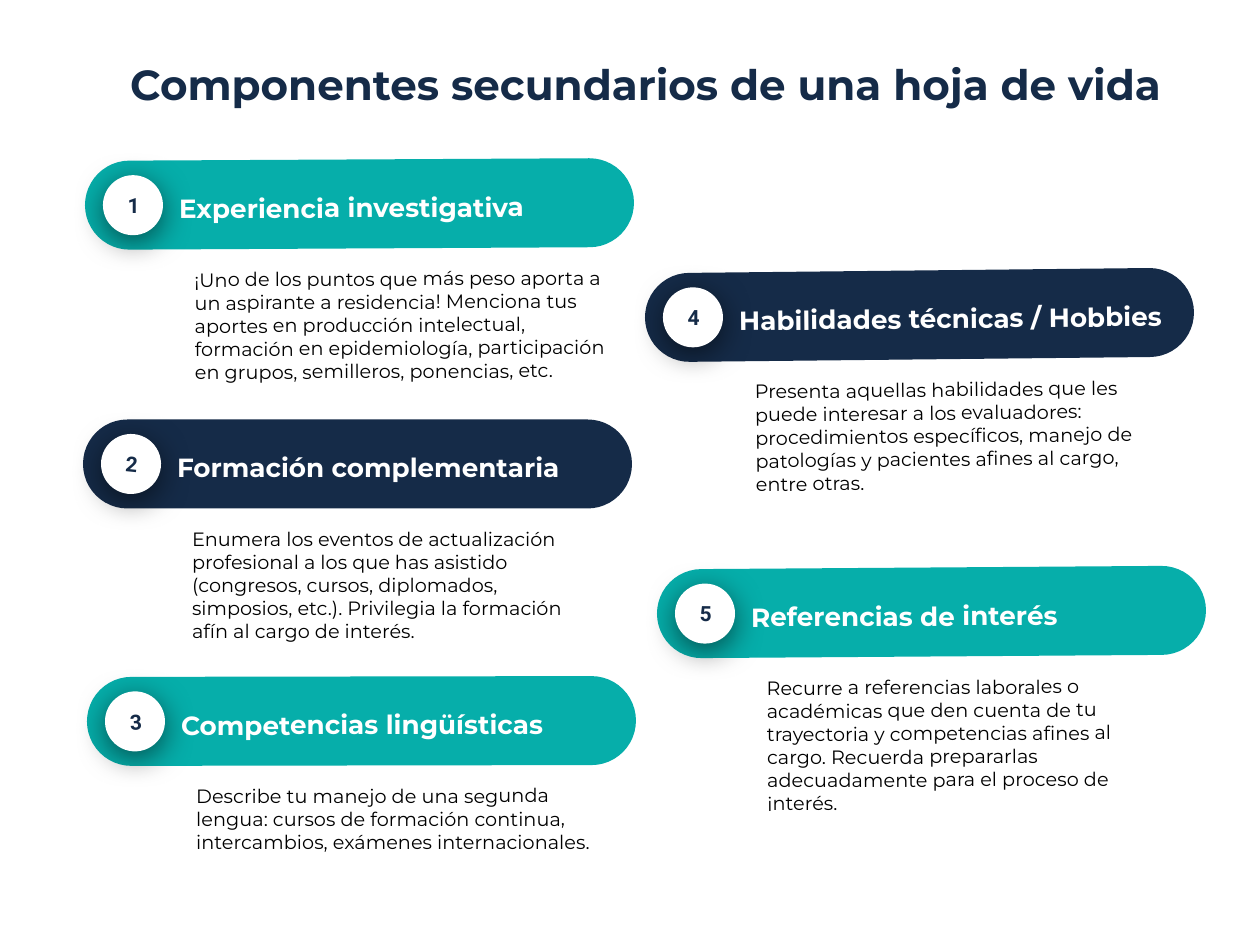
from dataclasses import dataclass
from math import cos, radians, sin

from lxml.etree import SubElement
from pptx import Presentation
from pptx.dml.color import RGBColor
from pptx.enum.shapes import MSO_SHAPE as Preset
from pptx.enum.text import MSO_ANCHOR as Anchor, MSO_AUTO_SIZE as AutoSize, PP_ALIGN as Align
from pptx.oxml.ns import qn
from pptx.shapes.autoshape import Shape
from pptx.shapes.shapetree import GroupShapes
from pptx.slide import Slide
from pptx.util import Emu, Pt

EMU_PER_PX = 914400 / 126
COLORS = {"navy": "152B48", "teal": "06AEAA", "white": "FFFFFF", "black": "000000"}
BAR_WIDTH, BAR_HEIGHT = 549, 89
BADGE_SIZE = 60
BADGE_LEFT, HEADING_LEFT, BODY_LEFT = -257, -197, -182
HEADING_HEIGHT, BODY_HEIGHT = 63, 82
HEADING_DROP, BODY_DROP = 1, 88
INSET = 16


@dataclass(frozen=True)
class Card:
    number: int
    center_x: int
    center_y: int
    tilt: float
    badge_tilt: float
    color: str
    heading: str
    body: str
    body_width: int
    heading_width: int = 436


CARDS = [
    Card(1, 360, 204, -0.3, 0, "teal", "Experiencia investigativa",
         "¡Uno de los puntos que más peso aporta a un aspirante a residencia! Menciona tus "
         "aportes en producción intelectual, formación en epidemiología, participación en "
         "grupos, semilleros, ponencias, etc.", 446),
    Card(2, 358, 464, 0, 6.1, "navy", "Formación complementaria",
         "Enumera los eventos de actualización profesional a los que has asistido (congresos, "
         "cursos, diplomados, simposios, etc.). Privilegia la formación afín al cargo de "
         "interés.", 432),
    Card(3, 362, 721, -0.1, -3.2, "teal", "Competencias lingüísticas",
         "Describe tu manejo de una segunda lengua: cursos de formación continua, "
         "intercambios, exámenes internacionales.", 447),
    Card(4, 920, 315, -0.6, 0, "navy", "Habilidades técnicas / Hobbies",
         "Presenta aquellas habilidades que les puede interesar a los evaluadores: "
         "procedimientos específicos, manejo de patologías y pacientes afines al cargo, "
         "entre otras.", 444, 471),
    Card(5, 932, 612, -0.4, 0.6, "teal", "Referencias de interés",
         "Recurre a referencias laborales o académicas que den cuenta de tu trayectoria y "
         "competencias afines al cargo. Recuerda prepararlas adecuadamente para el proceso "
         "de interés.", 438),
]


def px(length: float) -> Emu:
    return Emu(round(length * EMU_PER_PX))


def rgb(color: str) -> RGBColor:
    return RGBColor.from_string(COLORS[color])


def box_on_card(card: Card, left: int, drop: int, width: int, height: int) -> list[Emu]:
    angle = radians(card.tilt)
    across = left + width / 2
    x = card.center_x + across * cos(angle) - drop * sin(angle)
    y = card.center_y + across * sin(angle) + drop * cos(angle)
    return [px(value) for value in (x - width / 2, y - height / 2, width, height)]


def write(shape: Shape, text: str, size: int, color: str, font_name: str = "Montserrat",
          bold: bool = False, anchor: Anchor = Anchor.MIDDLE, spacing: float = 1.0) -> None:
    frame = shape.text_frame
    frame.word_wrap = True
    frame.vertical_anchor = anchor
    frame.margin_left = frame.margin_right = frame.margin_top = frame.margin_bottom = px(INSET)
    paragraph = frame.paragraphs[0]
    paragraph.text = text
    paragraph.alignment = Align.LEFT
    paragraph.line_spacing = spacing
    font = paragraph.font
    font.name, font.size, font.bold = font_name, Pt(size), bold
    font.color.rgb = rgb(color)


def add_filled(shapes: GroupShapes, preset: Preset, box: list[Emu], color: str,
               rotation: float) -> Shape:
    shape = shapes.add_shape(preset, *box)
    shape.shadow.inherit = False
    shape.fill.solid()
    shape.fill.fore_color.rgb = rgb(color)
    shape.line.fill.background()
    shape.rotation = rotation
    return shape


def cast_shadow(shape: Shape) -> None:
    effects = shape._element.spPr.find(qn("a:effectLst"))
    shadow = SubElement(effects, qn("a:outerShdw"), blurRad=str(Pt(18)), dist=str(Pt(4)),
                        dir="5400000", algn="ctr", rotWithShape="0")
    tint = SubElement(shadow, qn("a:srgbClr"), val=COLORS["black"])
    SubElement(tint, qn("a:alpha"), val="55000")


def add_card(slide: Slide, card: Card) -> None:
    shapes = slide.shapes.add_group_shape().shapes
    bar = add_filled(shapes, Preset.ROUNDED_RECTANGLE,
                     box_on_card(card, -BAR_WIDTH // 2, 0, BAR_WIDTH, BAR_HEIGHT),
                     card.color, card.tilt)
    bar.adjustments[0] = 0.5

    badge = add_filled(shapes, Preset.OVAL,
                       box_on_card(card, BADGE_LEFT, 0, BADGE_SIZE, BADGE_SIZE),
                       "white", card.badge_tilt)
    cast_shadow(badge)
    write(badge, str(card.number), 12, "navy", "Roboto", bold=True)

    heading = shapes.add_textbox(*box_on_card(card, HEADING_LEFT, HEADING_DROP,
                                              card.heading_width, HEADING_HEIGHT))
    heading.rotation = card.tilt
    write(heading, card.heading, 15, "white", bold=True, spacing=1.15)

    body = shapes.add_textbox(*box_on_card(card, BODY_LEFT, BODY_DROP,
                                           card.body_width, BODY_HEIGHT))
    body.rotation = card.tilt
    write(body, card.body, 11, "black", anchor=Anchor.TOP)


def add_title(slide: Slide) -> None:
    title = slide.shapes.title
    title.left, title.top, title.width, title.height = px(-69), px(58), px(1429), px(83)
    frame = title.text_frame
    frame.auto_size = AutoSize.NONE
    frame.vertical_anchor = Anchor.TOP
    paragraph = frame.paragraphs[0]
    paragraph.text = "Componentes secundarios de una hoja de vida"
    paragraph.alignment = Align.CENTER
    paragraph.line_spacing = 0.9
    paragraph.space_before = Pt(0)
    font = paragraph.font
    font.name, font.size, font.bold = "Montserrat", Pt(24), True
    font.color.rgb = rgb("navy")


def main() -> None:
    presentation = Presentation()
    presentation.slide_width, presentation.slide_height = px(1260), px(945)
    slide = presentation.slides.add_slide(presentation.slide_layouts[5])
    add_title(slide)
    for card in CARDS:
        add_card(slide, card)
    presentation.save("out.pptx")


if __name__ == "__main__":
    main()
